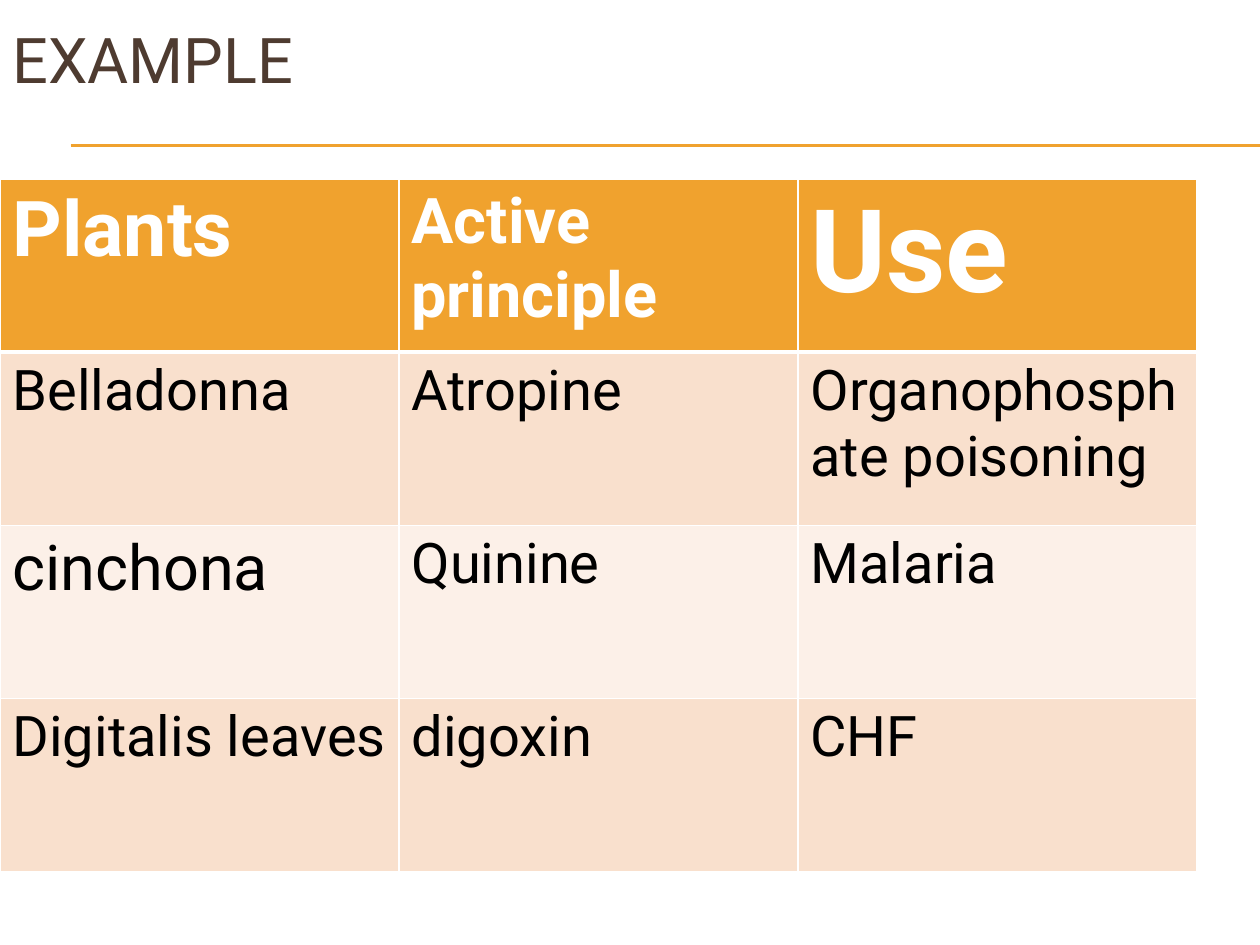
from dataclasses import dataclass

from lxml.etree import SubElement
from pptx import Presentation
from pptx.dml.color import RGBColor
from pptx.enum.shapes import MSO_CONNECTOR
from pptx.enum.text import MSO_ANCHOR, PP_ALIGN
from pptx.oxml import parse_xml
from pptx.oxml.ns import nsdecls, qn
from pptx.slide import Slide
from pptx.table import _Cell
from pptx.text.text import _Paragraph
from pptx.util import Inches, Pt

FONT = "Roboto"
ORANGE = RGBColor(0xF0, 0xA2, 0x2E)
BROWN = RGBColor(0x4E, 0x3B, 0x30)
PEACH = RGBColor(0xF9, 0xE0, 0xCD)
CREAM = RGBColor(0xFC, 0xF0, 0xE8)
WHITE = RGBColor(0xFF, 0xFF, 0xFF)
BLACK = RGBColor(0, 0, 0)


@dataclass(frozen=True)
class Entry:
    text: str
    size: int = 32


PLANT_ROWS = [
    [Entry("Plants", 44), Entry("Active principle", 36), Entry("Use", 66)],
    [Entry("Belladonna"), Entry("Atropine"), Entry("Organophosphate poisoning")],
    [Entry("cinchona", 36), Entry("Quinine"), Entry("Malaria")],
    [Entry("Digitalis leaves"), Entry("digoxin"), Entry("CHF")],
]


def add_run(paragraph: _Paragraph, entry: Entry, color: RGBColor, bold: bool = False) -> None:
    run = paragraph.add_run()
    run.text = entry.text
    run.font.name = FONT
    run.font.size = Pt(entry.size)
    run.font.bold = bold
    run.font.color.rgb = color


def add_rule(slide: Slide, y: float) -> None:
    """Draw a thin line running to the right edge of the slide."""
    rule = slide.shapes.add_connector(
        MSO_CONNECTOR.STRAIGHT, Inches(0.56), Inches(y), Inches(10), Inches(y))
    rule.line.color.rgb = ORANGE
    rule.line.width = Pt(0.75)
    SubElement(rule._element.spPr, qn("a:effectLst"))


def set_borders(cell: _Cell, top: int, bottom: int) -> None:
    """Give the cell white borders, with top and bottom widths in points."""
    properties = cell._tc.get_or_add_tcPr()
    widths = {"lnL": 1, "lnR": 1, "lnT": top, "lnB": bottom}
    for position, (side, width) in enumerate(widths.items()):
        properties.insert(position, parse_xml(
            f'<a:{side} {nsdecls("a")} w="{Pt(width)}"><a:solidFill>'
            f'<a:srgbClr val="{WHITE}"/></a:solidFill></a:{side}>'))


def add_title(slide: Slide) -> None:
    title = slide.shapes.title
    title.left, title.top = Inches(0), Inches(0)
    title.width, title.height = Inches(9.5), Inches(0.92)
    title.text_frame.vertical_anchor = MSO_ANCHOR.MIDDLE
    paragraph = title.text_frame.paragraphs[0]
    paragraph.alignment = PP_ALIGN.LEFT
    add_run(paragraph, Entry("EXAMPLE", 36), BROWN)


def add_plant_table(slide: Slide) -> None:
    table = slide.shapes.add_table(
        len(PLANT_ROWS), len(PLANT_ROWS[0]),
        Inches(0), Inches(1.42), Inches(9.5), Inches(5.5)).table
    for row, entries in enumerate(PLANT_ROWS):
        is_header = row == 0
        fill = ORANGE if is_header else PEACH if row % 2 else CREAM
        for column, entry in enumerate(entries):
            cell = table.cell(row, column)
            cell.fill.solid()
            cell.fill.fore_color.rgb = fill
            set_borders(cell, top=3 if row == 1 else 1, bottom=3 if is_header else 1)
            add_run(cell.text_frame.paragraphs[0], entry,
                    WHITE if is_header else BLACK, bold=is_header)


def main() -> None:
    presentation = Presentation()
    presentation.slide_width = Inches(10)
    presentation.slide_height = Inches(7.5)
    slide = presentation.slides.add_slide(presentation.slide_layouts[5])
    for y in (1.15, 1.16):
        add_rule(slide, y)
    add_title(slide)
    add_plant_table(slide)
    presentation.save("out.pptx")


if __name__ == "__main__":
    main()
